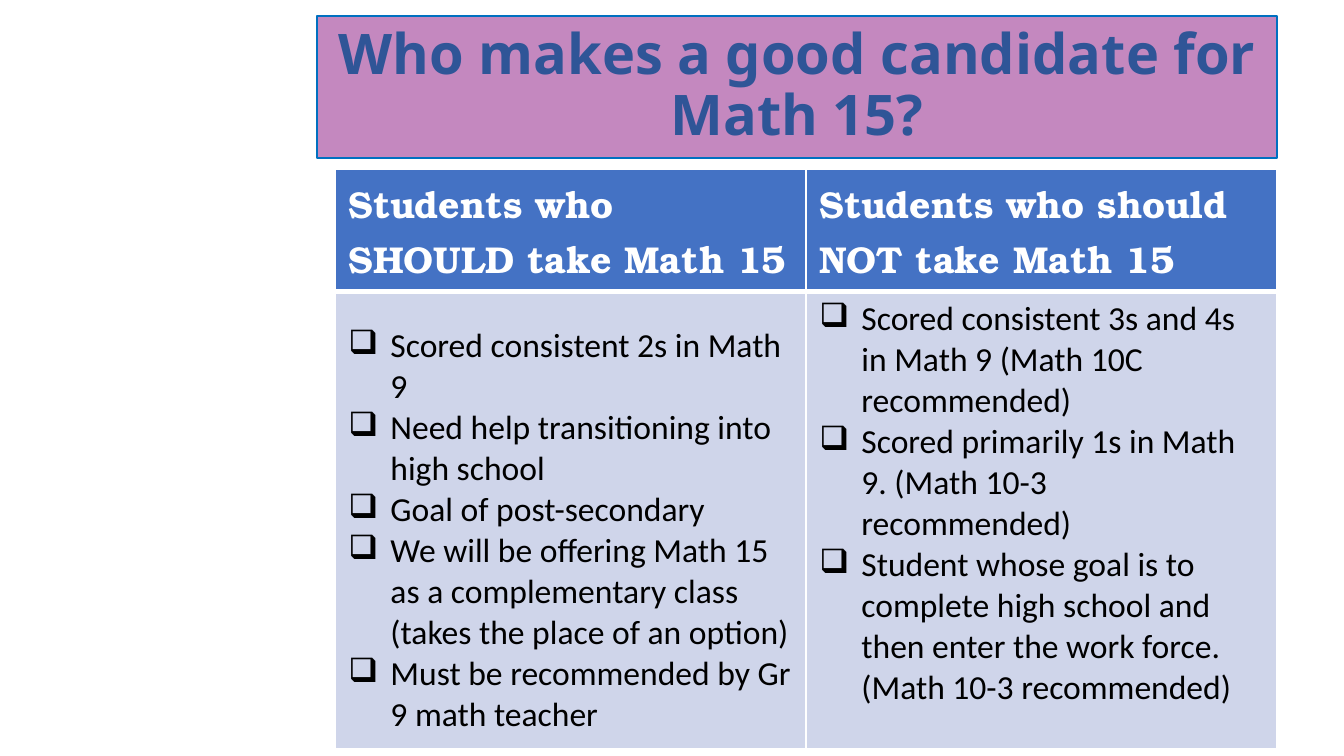
from dataclasses import dataclass

from lxml import etree
from pptx import Presentation
from pptx.dml.color import RGBColor
from pptx.enum.text import MSO_ANCHOR, MSO_AUTO_SIZE, PP_ALIGN
from pptx.oxml.ns import qn
from pptx.util import Emu, Pt

LEFT, CENTER = PP_ALIGN.LEFT, PP_ALIGN.CENTER
TOP, MIDDLE = MSO_ANCHOR.TOP, MSO_ANCHOR.MIDDLE
NO_AUTOFIT = MSO_AUTO_SIZE.NONE
TITLE_ONLY = 5
EMU_PER_PX = 914400 / 134.4


@dataclass(frozen=True)
class Theme:
    title_fill: str = "C488BF"
    title_line: str = "0070C0"
    title_text: str = "2F5597"
    header_fill: str = "4472C4"
    body_fill: str = "CFD5EA"
    white: str = "FFFFFF"
    black: str = "000000"
    title_font: str = "Noto Sans"
    header_font: str = "TeX Gyre Bonum"
    body_font: str = "Calibri"
    title_size: int = 30
    header_size: int = 20
    body_size: int = 18
    thin: int = 1
    thick: int = 3


@dataclass(frozen=True)
class Column:
    heading: str
    criteria: tuple[str, ...]
    top_margin: int


THEME = Theme()
COLUMN_WIDTH, HEADER_HEIGHT, BODY_HEIGHT = 471, 106, 457
BULLET_INDENT = 42

COLUMNS = (
    Column("Students who SHOULD take Math 15", (
        "Scored consistent 2s in Math 9",
        "Need help transitioning into high school",
        "Goal of post-secondary",
        "We will be offering Math 15 as a complementary class "
        "(takes the place of an option)",
        "Must be recommended by Gr 9 math teacher",
    ), 34),
    Column("Students who should NOT take Math 15", (
        "Scored consistent 3s and 4s in Math 9 (Math 10C recommended)",
        "Scored primarily 1s in Math 9. (Math 10-3 recommended)",
        "Student whose goal is to complete high school and then enter "
        "the work force. (Math 10-3 recommended)",
    ), 7),
)


def px(length: int) -> Emu:
    return Emu(round(length * EMU_PER_PX))


def rgb(color: str) -> RGBColor:
    return RGBColor.from_string(color)


def add_bullet(paragraph, mark: str) -> None:
    properties = paragraph._p.get_or_add_pPr()
    properties.set("marL", str(px(BULLET_INDENT)))
    properties.set("indent", str(-px(BULLET_INDENT)))
    etree.SubElement(properties, qn("a:buChar"), char=mark)


def write(frame, *lines: str, font: str, size: int, color: str,
          bold: bool = False, align=LEFT, spacing: float = 1.0,
          bullet: str = "") -> None:
    frame.word_wrap = True
    for index, line in enumerate(lines):
        paragraph = frame.add_paragraph() if index else frame.paragraphs[0]
        paragraph.alignment = align
        paragraph.line_spacing = spacing
        if bullet:
            add_bullet(paragraph, bullet)
        run = paragraph.add_run()
        run.text = line
        run.font.name = font
        run.font.size = Pt(size)
        run.font.bold = bold
        run.font.color.rgb = rgb(color)


def format_cell(cell, fill: str, top: int, bottom: int) -> None:
    """Set white borders, with top and bottom widths in points, then the fill."""
    properties = cell._tc.get_or_add_tcPr()
    widths = {"L": THEME.thin, "R": THEME.thin, "T": top, "B": bottom}
    for side, width in widths.items():
        line = etree.SubElement(properties, qn(f"a:ln{side}"), w=str(Pt(width)))
        solid = etree.SubElement(line, qn("a:solidFill"))
        etree.SubElement(solid, qn("a:srgbClr"), val=THEME.white)
    cell.fill.solid()
    cell.fill.fore_color.rgb = rgb(fill)
    cell.vertical_anchor = TOP


def draw_title(slide, text: str) -> None:
    title = slide.shapes.title
    title.left, title.top, title.width, title.height = map(px, (317, 16, 960, 142))
    title.fill.solid()
    title.fill.fore_color.rgb = rgb(THEME.title_fill)
    title.line.color.rgb = rgb(THEME.title_line)
    title.line.width = Pt(THEME.thin)
    title.text_frame.auto_size = NO_AUTOFIT
    title.text_frame.vertical_anchor = MIDDLE
    write(title.text_frame, text, font=THEME.title_font, size=THEME.title_size,
          color=THEME.title_text, bold=True, align=CENTER, spacing=0.9)


def draw_candidates(slide, columns: tuple[Column, ...]) -> None:
    table = slide.shapes.add_table(
        2, len(columns), px(335), px(169),
        px(COLUMN_WIDTH * len(columns)), px(HEADER_HEIGHT + BODY_HEIGHT)).table
    table.rows[0].height = px(HEADER_HEIGHT)
    table.rows[1].height = px(BODY_HEIGHT)
    for index, column in enumerate(columns):
        table.columns[index].width = px(COLUMN_WIDTH)
        header, body = table.cell(0, index), table.cell(1, index)
        format_cell(header, THEME.header_fill, THEME.thin, THEME.thick)
        format_cell(body, THEME.body_fill, THEME.thick, THEME.thin)
        body.margin_top = px(column.top_margin)
        write(header.text_frame, column.heading, font=THEME.header_font,
              size=THEME.header_size, color=THEME.white, bold=True)
        write(body.text_frame, *column.criteria, font=THEME.body_font,
              size=THEME.body_size, color=THEME.black, bullet="❑")


def main() -> None:
    deck = Presentation()
    deck.slide_width, deck.slide_height = px(1344), px(756)
    slide = deck.slides.add_slide(deck.slide_layouts[TITLE_ONLY])
    draw_candidates(slide, COLUMNS)
    draw_title(slide, "Who makes a good candidate for Math 15?")
    deck.save("out.pptx")


if __name__ == "__main__":
    main()
